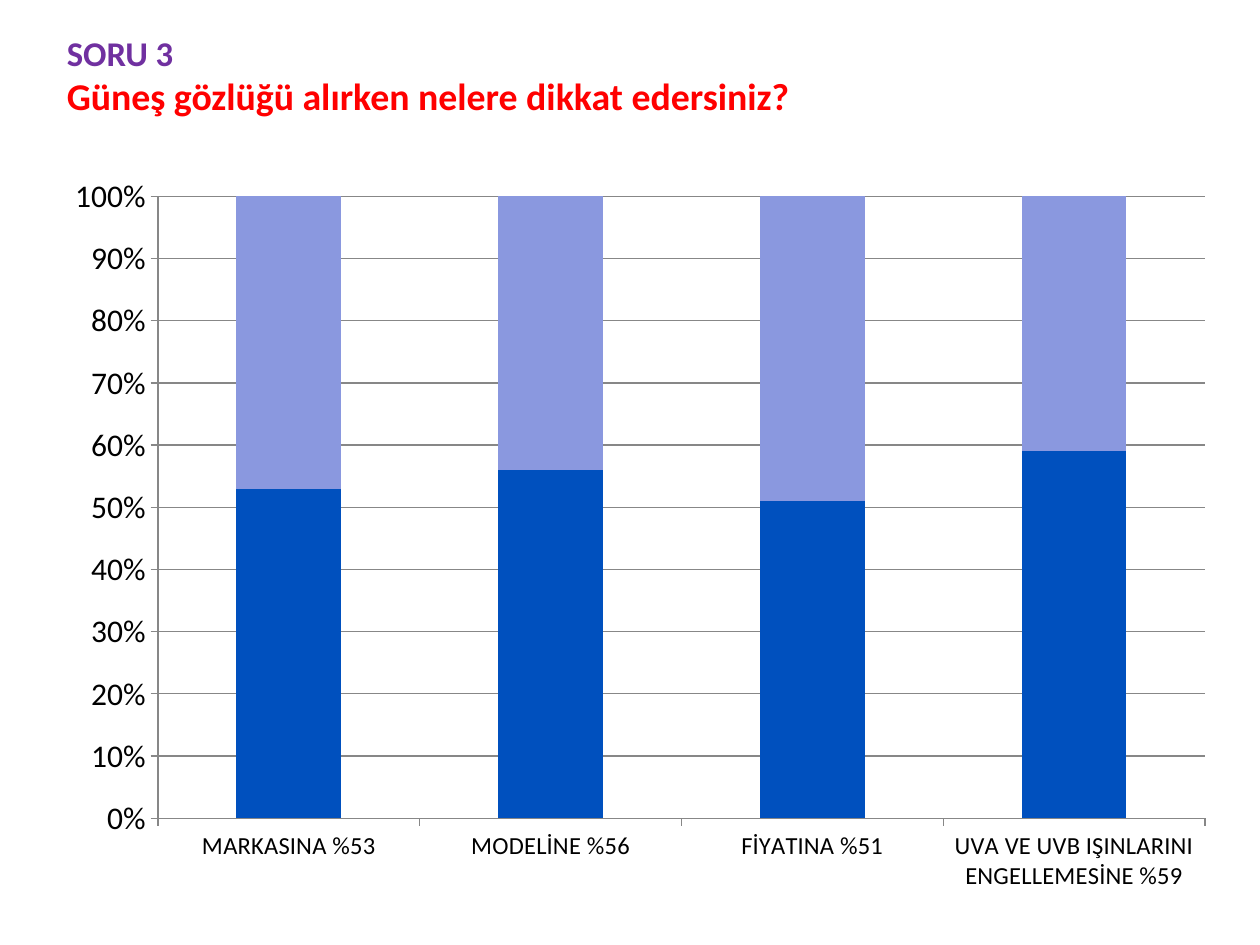
from dataclasses import dataclass
from pptx import Presentation, util as u
from pptx.chart import data as cd
from pptx.dml import color as co
from pptx.enum import chart as ch, text as tx


@dataclass(frozen=True)
class Theme:
    face: str = "Calibri"
    ink: str = "000000"
    grid: str = "878787"
    label: str = "7030A0"
    ask: str = "FF0000"
    fills: tuple = ("0050BE", "8A98DF")
    label_size: float = 19.8
    ask_size: float = 21.6
    axis_size: float = 18
    cat_size: float = 14


THEME = Theme()


def assign(item, values):
    for name, value in values.items():
        setattr(item, name, value)


def box(left, top, width, height):
    return dict(left=u.Inches(left), top=u.Inches(top),
                width=u.Inches(width), height=u.Inches(height))


def style(font, size, color, bold=False):
    assign(font, dict(name=THEME.face, size=u.Pt(size), bold=bold))
    font.color.rgb = co.RGBColor.from_string(color)


def add_title(slide, label, ask):
    title = slide.shapes.title
    assign(title, box(0.43, 0.29, 9, 0.61))
    frame = title.text_frame
    assign(frame, dict(word_wrap=True, auto_size=tx.MSO_AUTO_SIZE.NONE,
                       vertical_anchor=tx.MSO_ANCHOR.MIDDLE))
    para = frame.paragraphs[0]
    para.alignment = tx.PP_ALIGN.LEFT
    first = para.add_run()
    first.text = label
    style(first.font, THEME.label_size, THEME.label, True)
    para.add_line_break()
    second = para.add_run()
    second.text = ask
    style(second.font, THEME.ask_size, THEME.ask, True)


def style_line(line):
    line.color.rgb = co.RGBColor.from_string(THEME.grid)
    line.width = u.Pt(0.75)


def style_axis(axis, size, values):
    assign(axis, dict(major_tick_mark=ch.XL_TICK_MARK.OUTSIDE,
                      minor_tick_mark=ch.XL_TICK_MARK.NONE, **values))
    style_line(axis.format.line)
    style(axis.tick_labels.font, size, THEME.ink)


def add_chart(slide, shares):
    data = cd.CategoryChartData()
    data.categories = [f"{name} %{share}" for name, share in shares.items()]
    data.add_series("Series 1", list(shares.values()))
    data.add_series("Series 2", [100 - share for share in shares.values()])
    area = box(0.41, 1.29, 9.34, 5.9)
    chart = slide.shapes.add_chart(
        ch.XL_CHART_TYPE.COLUMN_STACKED_100,
        area["left"], area["top"], area["width"], area["height"], data).chart
    assign(chart, dict(has_legend=False, has_title=False))
    style(chart.font, THEME.axis_size, THEME.ink)
    plot = chart.plots[0]
    assign(plot, dict(gap_width=150, overlap=100, vary_by_categories=False))
    for series, fill in zip(plot.series, THEME.fills):
        series.format.fill.solid()
        series.format.fill.fore_color.rgb = co.RGBColor.from_string(fill)
    style_axis(chart.category_axis, THEME.cat_size, {})
    value = chart.value_axis
    style_axis(value, THEME.axis_size, dict(
        minimum_scale=0, maximum_scale=1, major_unit=0.1,
        has_major_gridlines=True))
    style_line(value.major_gridlines.format.line)
    assign(value.tick_labels, dict(number_format="0%",
                                   number_format_is_linked=False))


def main():
    deck = Presentation()
    assign(deck, dict(slide_width=u.Inches(10), slide_height=u.Inches(7.5)))
    slide = deck.slides.add_slide(deck.slide_layouts[5])
    add_title(slide, "SORU 3",
              "Güneş gözlüğü alırken nelere dikkat edersiniz?")
    add_chart(slide, {
        "MARKASINA": 53,
        "MODELİNE": 56,
        "FİYATINA": 51,
        "UVA VE UVB IŞINLARINI ENGELLEMESİNE": 59,
    })
    deck.save("out.pptx")


if __name__ == "__main__":
    main()
